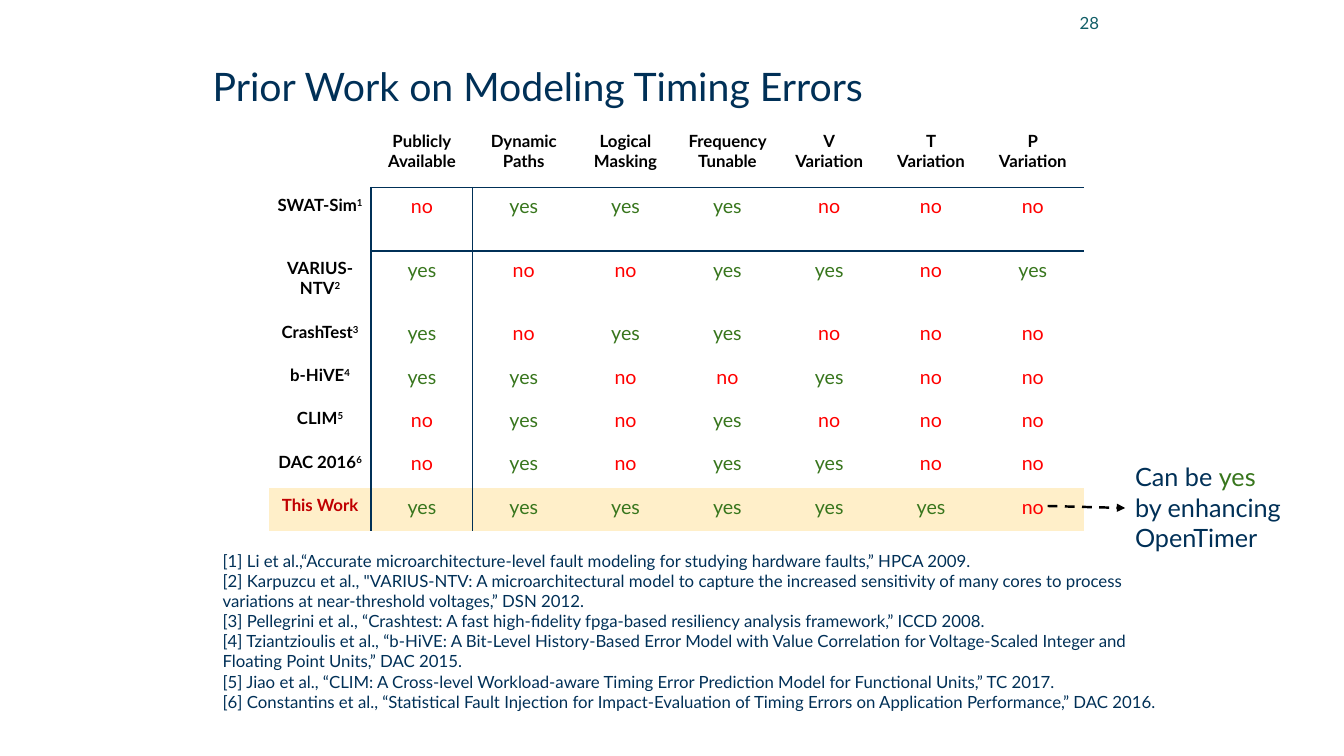
from dataclasses import dataclass

from lxml.etree import SubElement
from pptx import Presentation
from pptx.dml.color import RGBColor
from pptx.enum.dml import MSO_LINE
from pptx.enum.shapes import MSO_CONNECTOR
from pptx.enum.text import MSO_ANCHOR, MSO_AUTO_SIZE, PP_ALIGN
from pptx.oxml.ns import qn
from pptx.util import Emu, Pt

PX = 9144  # 100 px to the inch
PLAIN_TABLE_STYLE = "{2D5ABB26-0587-4C30-8999-92F81FD0307C}"


@dataclass(frozen=True)
class Theme:
    font: str = "Lato"
    navy: str = "003057"
    teal: str = "115E67"
    black: str = "000000"
    green: str = "38761D"
    red: str = "FF0000"
    own_work: str = "C00000"
    highlight: str = "FFEFC9"
    title_size: int = 28
    callout_size: int = 18
    verdict_size: int = 14
    small_size: int = 12


THEME = Theme()

CRITERIA = ["Publicly\nAvailable", "Dynamic\nPaths", "Logical\nMasking",
            "Frequency Tunable", "V\nVariation", "T\nVariation", "P\nVariation"]

# One letter per criterion: y = yes, n = no
WORKS = [("SWAT-Sim", "nyyynnn"), ("VARIUS-NTV", "ynnyyny"),
         ("CrashTest", "ynyynnn"), ("b-HiVE", "yynnynn"),
         ("CLIM", "nynynnn"), ("DAC 2016", "nynyynn"),
         ("This Work", "yyyyyyn")]

REFERENCES = [
    "[1] Li et al.,“Accurate microarchitecture-level fault modeling for studying hardware faults,” HPCA 2009.",
    "[2] Karpuzcu et al., \"VARIUS-NTV: A microarchitectural model to capture the increased sensitivity of many "
    "cores to process variations at near-threshold voltages,” DSN 2012.",
    "[3] Pellegrini et al., “Crashtest: A fast high-ﬁdelity fpga-based resiliency analysis framework,” ICCD 2008.",
    "[4] Tziantzioulis et al., “b-HiVE: A Bit-Level History-Based Error Model with Value Correlation for "
    "Voltage-Scaled Integer and Floating Point Units,” DAC 2015.",
    "[5] Jiao et al., “CLIM: A Cross-level Workload-aware Timing Error Prediction Model for Functional Units,” "
    "TC 2017.",
    "[6] Constantins et al., “Statistical Fault Injection for Impact-Evaluation of Timing Errors on Application "
    "Performance,” DAC 2016.",
]


def px(*lengths):
    return [Emu(length * PX) for length in lengths]


def style_run(run, size, color, bold=False):
    run.font.name = THEME.font
    run.font.size = Pt(size)
    run.font.bold = bold
    run.font.color.rgb = RGBColor.from_string(color)


def write(frame, text, size, color, bold=False, align=PP_ALIGN.LEFT):
    frame.text = text
    for paragraph in frame.paragraphs:
        paragraph.alignment = align
        for run in paragraph.runs:
            style_run(run, size, color, bold)


def add_text(slide, box, text, size, color, align=PP_ALIGN.LEFT, grow=False):
    frame = slide.shapes.add_textbox(*px(*box)).text_frame
    frame.word_wrap = True
    if grow:
        frame.auto_size = MSO_AUTO_SIZE.SHAPE_TO_FIT_TEXT
    write(frame, text, size, color, align=align)
    return frame


def add_title(slide):
    title = add_text(slide, (211, 67, 1100, 675), "Prior Work on Modeling Timing Errors",
                     THEME.title_size, THEME.navy)
    title.margin_left = title.margin_right = title.margin_top = title.margin_bottom = 0
    title.paragraphs[0].line_spacing = 0.9


def add_border(cell, side):
    border = SubElement(cell._tc.get_or_add_tcPr(), qn(f"a:ln{side}"), w=str(Pt(1)))
    solid = SubElement(border, qn("a:solidFill"))
    SubElement(solid, qn("a:srgbClr"), val=THEME.navy)


def add_citation(paragraph, number):
    citation = paragraph.add_run()
    citation.text = str(number)
    style_run(citation, THEME.small_size, THEME.black, bold=True)
    citation._r.get_or_add_rPr().set("baseline", "30000")


def fill_cell(cell, row, column):
    if row == 0:
        if column:
            write(cell.text_frame, CRITERIA[column - 1], THEME.small_size, THEME.black, True, PP_ALIGN.CENTER)
        return
    work, verdicts = WORKS[row - 1]
    own = row == len(WORKS)
    if column == 0:
        color = THEME.own_work if own else THEME.black
        write(cell.text_frame, work, THEME.small_size, color, True, PP_ALIGN.CENTER)
        if not own:
            add_citation(cell.text_frame.paragraphs[0], row)
    else:
        verdict, color = {"y": ("yes", THEME.green), "n": ("no", THEME.red)}[verdicts[column - 1]]
        write(cell.text_frame, verdict, THEME.verdict_size, color, align=PP_ALIGN.CENTER)


def add_comparison(slide):
    heights = [63] * 3 + [43] * 5
    column_width = 101
    columns = len(CRITERIA) + 1
    table = slide.shapes.add_table(len(heights), columns,
                                   *px(267, 123, columns * column_width, sum(heights))).table
    table.first_row = table.horz_banding = False
    table._tbl.tblPr.find(qn("a:tableStyleId")).text = PLAIN_TABLE_STYLE
    for column in table.columns:
        column.width = Emu(column_width * PX)
    for row, height in enumerate(heights):
        table.rows[row].height = Emu(height * PX)
        for column in range(columns):
            cell = table.cell(row, column)
            cell.margin_left, cell.margin_right, cell.margin_top, cell.margin_bottom = px(7, 7, 7, 7)
            fill_cell(cell, row, column)
            # Rules under the header and beside the work names
            edges = {"L": row > 0 and column == 1, "R": row > 0 and column == 0,
                     "T": row == 1 and column > 0, "B": row == 0 and column > 0}
            for side, ruled in edges.items():
                if ruled:
                    add_border(cell, side)
            if row == len(WORKS):
                cell.fill.solid()
                cell.fill.fore_color.rgb = RGBColor.from_string(THEME.highlight)
            else:
                cell.fill.background()


def add_dashed_arrow(slide, start, end):
    arrow = slide.shapes.add_connector(MSO_CONNECTOR.STRAIGHT, *px(*start, *end))
    arrow.line.color.rgb = RGBColor.from_string(THEME.black)
    arrow.line.width = Pt(1.75)
    arrow.line.dash_style = MSO_LINE.DASH
    SubElement(arrow.line._get_or_add_ln(), qn("a:tailEnd"), type="triangle")
    SubElement(arrow._element.spPr, qn("a:effectLst"))


def add_callout(slide):
    callout = add_text(slide, (1116, 453, 217, 101), "Can be ",
                       THEME.callout_size, THEME.navy, grow=True).paragraphs[0]
    for text, color in (("yes", THEME.green), ("by enhancing OpenTimer", THEME.navy)):
        if color == THEME.navy:
            callout.add_line_break()
        run = callout.add_run()
        run.text = text
        style_run(run, THEME.callout_size, color)


def main():
    deck = Presentation()
    deck.slide_width, deck.slide_height = px(1333, 750)
    slide = deck.slides.add_slide(deck.slide_layouts[6])

    # Heading and slide number
    add_title(slide)
    number = add_text(slide, (978, -2, 122, 50), "28", THEME.small_size, THEME.teal, PP_ALIGN.RIGHT)
    number.vertical_anchor = MSO_ANCHOR.MIDDLE

    # Comparison of prior work
    add_comparison(slide)

    # References
    add_text(slide, (211, 541, 967, 172), "\n".join(REFERENCES), THEME.small_size, THEME.navy, grow=True)

    # Remark on the last verdict
    add_dashed_arrow(slide, (1039, 502), (1116, 504))
    add_callout(slide)

    deck.save("out.pptx")


if __name__ == "__main__":
    main()
